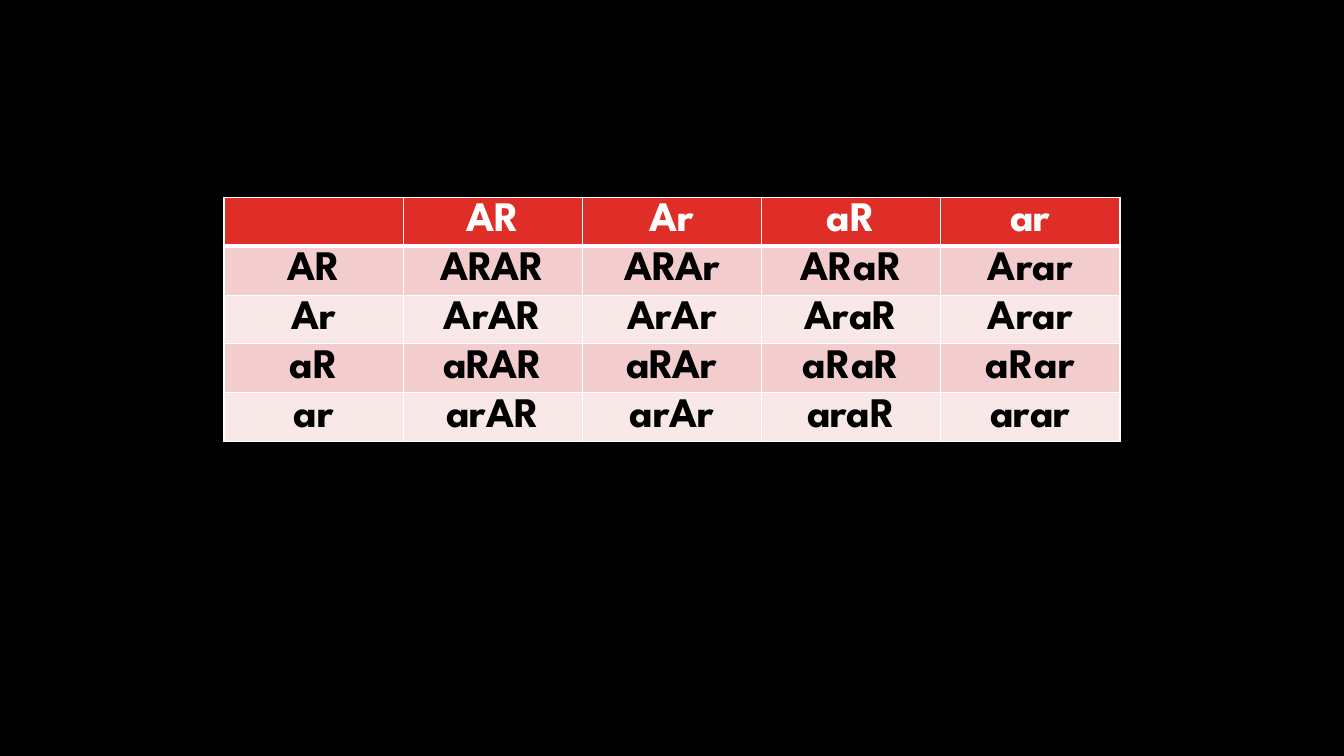
from dataclasses import dataclass

from lxml import etree
from pptx import Presentation
from pptx import util as u
from pptx.dml.color import RGBColor
from pptx.enum import text
from pptx.oxml import ns

CROSS = [
    ["", "AR", "Ar", "aR", "ar"],
    ["AR", "ARAR", "ARAr", "ARaR", "Arar"],
    ["Ar", "ArAR", "ArAr", "AraR", "Arar"],
    ["aR", "aRAR", "aRAr", "aRaR", "aRar"],
    ["ar", "arAR", "arAr", "araR", "arar"],
]
BLANK_LAYOUT = 6
SLIDE_WIDTH, SLIDE_HEIGHT = u.Inches(13.33), u.Inches(7.5)
TABLE_WIDTH = SLIDE_WIDTH * 2 // 3
TABLE_TOP = u.Inches(1.96)
ROW_HEIGHT = u.Inches(0.48)


@dataclass(frozen=True)
class Theme:
    background: str = "000000"
    header: str = "DF2E28"
    bands: tuple = ("F9E8E8", "F3CDCD")
    header_text: str = "FFFFFF"
    body_text: str = "000000"
    border: str = "FFFFFF"
    thin: float = 1
    thick: float = 3
    font: str = "League Spartan"
    size: float = 30


THEME = Theme()


def paint(fill, colour):
    fill.solid()
    fill.fore_color.rgb = RGBColor.from_string(colour)


def add_borders(cell, top, bottom):
    """Draw the four cell edges; the schema wants them before the fill."""
    properties = cell._tc.get_or_add_tcPr()
    edges = {"lnL": THEME.thin, "lnR": THEME.thin, "lnT": top, "lnB": bottom}
    for place, (edge, width) in enumerate(edges.items()):
        line = etree.Element(ns.qn(f"a:{edge}"), w=str(u.Pt(width)))
        fill = etree.SubElement(line, ns.qn("a:solidFill"))
        etree.SubElement(fill, ns.qn("a:srgbClr"), val=THEME.border)
        properties.insert(place, line)


def format_cell(cell, label, row):
    is_header = row == 0
    paint(cell.fill, THEME.header if is_header else THEME.bands[row % 2])
    add_borders(cell,
                top=THEME.thick if row == 1 else THEME.thin,
                bottom=THEME.thick if is_header else THEME.thin)
    if not label:
        return
    cell.text = label
    para = cell.text_frame.paragraphs[0]
    para.alignment = text.PP_ALIGN.CENTER
    para.font.name = THEME.font
    para.font.size = u.Pt(THEME.size)
    para.font.bold = True
    para.font.color.rgb = RGBColor.from_string(
        THEME.header_text if is_header else THEME.body_text)


def main():
    deck = Presentation()
    deck.slide_width, deck.slide_height = SLIDE_WIDTH, SLIDE_HEIGHT
    page = deck.slides.add_slide(deck.slide_layouts[BLANK_LAYOUT])
    paint(page.background.fill, THEME.background)

    table = page.shapes.add_table(
        len(CROSS), len(CROSS[0]), (SLIDE_WIDTH - TABLE_WIDTH) // 2, TABLE_TOP,
        TABLE_WIDTH, ROW_HEIGHT * len(CROSS)).table
    for row, labels in enumerate(CROSS):
        for column, label in enumerate(labels):
            format_cell(table.cell(row, column), label, row)

    deck.save("out.pptx")


if __name__ == "__main__":
    main()
